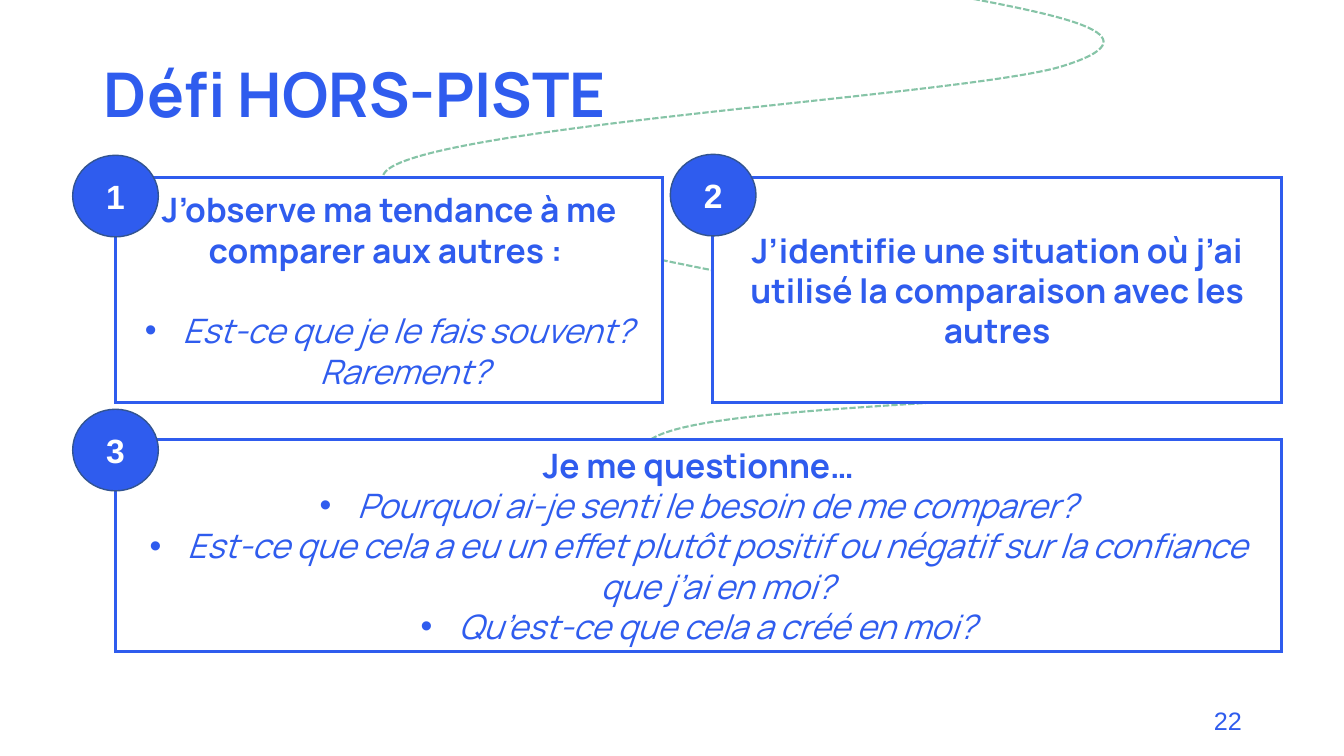
"""Build the "Défi HORS-PISTE" slide: three numbered challenge boxes over a dashed trail."""
from dataclasses import dataclass

import pptx
import pptx.dml.color
import pptx.enum.dml
import pptx.enum.shapes
import pptx.enum.text
import pptx.oxml.ns
import pptx.util
from lxml import etree

Pt = pptx.util.Pt
Align = pptx.enum.text.PP_ALIGN
qualified = pptx.oxml.ns.qn
Point = tuple[float, float]


@dataclass(frozen=True)
class Theme:
    blue: str = "2F5CEE"
    badge_edge: str = "325491"
    trail: str = "86C4A7"
    white: str = "FFFFFF"
    text_font: str = "Manrope"
    number_font: str = "Arial"
    title_size: float = 44
    text_size: float = 24
    page_size: float = 18
    bullet_indent: float = 27


@dataclass(frozen=True)
class Challenge:
    placeholder: int
    left: float
    top: float
    width: float
    height: float
    badge_top: float
    heading: str
    questions: tuple[str, ...] = ()
    question_gap: float = 0


THEME = Theme()
BADGE_WIDTH, BADGE_HEIGHT, BADGE_OVERHANG = 61.2, 58.3, 30.4

CHALLENGES = (
    Challenge(1, 82.3, 126.5, 391, 161.3, 110.9,
              "J’observe ma tendance à me comparer aux autres : ",
              ("Est-ce que je le fais souvent? Rarement? ",), 28.8),
    Challenge(2, 509.2, 126.5, 406, 161.3, 110.2,
              "J’identifie une situation où j’ai utilisé la comparaison avec les autres"),
    Challenge(3, 82.3, 313.7, 833, 151.9, 292.3,
              "Je me questionne…",
              ("Pourquoi ai-je senti le besoin de me comparer?",
               "Est-ce que cela a eu un effet plutôt positif ou négatif "
               "sur la confiance que j’ai en moi?",
               "Qu’est-ce que cela a créé en moi?")),
)

TRAIL_START: Point = (695.5, -0.7)
TRAIL_CURVES: tuple[tuple[Point, Point, Point], ...] = (
    ((761.8, 12.2), (828.7, 25.9), (758.2, 47.5)),
    ((687.6, 69.1), (267.1, 92.2), (273.6, 127.4)),
    ((279.4, 163.4), (763.2, 230.4), (795.6, 261.4)),
    ((828, 292.3), (519.8, 283.7), (467.3, 312.5)),
    ((414.7, 341.3), (447.8, 388.8), (480.2, 435.6)),
)


def rgb(value: str) -> pptx.dml.color.RGBColor:
    return pptx.dml.color.RGBColor.from_string(value)


def place(shape, left: float, top: float, width: float, height: float) -> None:
    shape.left, shape.top = Pt(left), Pt(top)
    shape.width, shape.height = Pt(width), Pt(height)


def paint(shape, fill: str, line: str, line_width: float) -> None:
    shape.fill.solid()
    shape.fill.fore_color.rgb = rgb(fill)
    shape.line.color.rgb = rgb(line)
    shape.line.width = Pt(line_width)
    outline = shape.element.spPr.find(qualified("a:ln"))
    etree.SubElement(outline, qualified("a:miter")).set("lim", "800000")


def prepare_frame(shape):
    frame = shape.text_frame
    frame.word_wrap = True
    frame.auto_size = pptx.enum.text.MSO_AUTO_SIZE.NONE
    frame.vertical_anchor = pptx.enum.text.MSO_ANCHOR.MIDDLE
    return frame


def add_text(paragraph, text: str, font: str, size: float, color: str,
             align: Align, bold: bool = False, italic: bool = False) -> None:
    paragraph.alignment = align
    run = paragraph.add_run()
    run.text = text
    run.font.name, run.font.size = font, Pt(size)
    run.font.bold, run.font.italic = bold, italic
    run.font.color.rgb = rgb(color)


def set_bullet(paragraph, bulleted: bool) -> None:
    properties = paragraph._p.get_or_add_pPr()
    indent = Pt(THEME.bullet_indent) if bulleted else 0
    properties.set("marL", str(indent))
    properties.set("indent", str(-indent))
    if bulleted:
        etree.SubElement(properties, qualified("a:buFont")).set("typeface", "Arial")
        etree.SubElement(properties, qualified("a:buChar")).set("char", "•")
    else:
        etree.SubElement(properties, qualified("a:buNone"))


def add_title(slide) -> None:
    title = slide.shapes.title
    place(title, 67, 17.3, 828, 104.4)
    paragraph = prepare_frame(title).paragraphs[0]
    paragraph.line_spacing = 0.9
    add_text(paragraph, "Défi HORS-PISTE", THEME.text_font, THEME.title_size,
             THEME.blue, Align.LEFT, bold=True)


def bend_segments(trail) -> None:
    segments = list(trail.element.iter(qualified("a:lnTo")))
    for segment, curve in zip(segments, TRAIL_CURVES):
        bend = etree.Element(qualified("a:cubicBezTo"))
        for x, y in curve:
            corner = etree.SubElement(bend, qualified("a:pt"))
            corner.set("x", str(Pt(x) - trail.left))
            corner.set("y", str(Pt(y) - trail.top))
        segment.getparent().replace(segment, bend)


def add_trail(slide) -> None:
    builder = slide.shapes.build_freeform(Pt(TRAIL_START[0]), Pt(TRAIL_START[1]))
    ends = [(Pt(x), Pt(y)) for _, _, (x, y) in TRAIL_CURVES]
    builder.add_line_segments(ends, close=False)
    trail = builder.convert_to_shape()
    bend_segments(trail)
    trail.shadow.inherit = False
    trail.fill.background()
    trail.line.color.rgb = rgb(THEME.trail)
    trail.line.width = Pt(1.5)
    trail.line.dash_style = pptx.enum.dml.MSO_LINE.SQUARE_DOT
    slide.shapes.title.element.addprevious(trail.element)


def add_challenge(slide, challenge: Challenge) -> None:
    box = slide.placeholders[challenge.placeholder]
    place(box, challenge.left, challenge.top, challenge.width, challenge.height)
    paint(box, THEME.white, THEME.blue, 2.25)
    frame = prepare_frame(box)
    for index, text in enumerate((challenge.heading, *challenge.questions)):
        is_question = index > 0
        paragraph = frame.add_paragraph() if is_question else frame.paragraphs[0]
        paragraph.space_before = Pt(challenge.question_gap if index == 1 else 0)
        set_bullet(paragraph, is_question)
        add_text(paragraph, text, THEME.text_font, THEME.text_size, THEME.blue,
                 Align.CENTER, bold=not is_question, italic=is_question)


def add_badge(slide, number: int, challenge: Challenge) -> None:
    badge = slide.shapes.add_shape(
        pptx.enum.shapes.MSO_SHAPE.OVAL, Pt(challenge.left - BADGE_OVERHANG),
        Pt(challenge.badge_top), Pt(BADGE_WIDTH), Pt(BADGE_HEIGHT))
    badge.shadow.inherit = False
    paint(badge, THEME.blue, THEME.badge_edge, 1)
    add_text(prepare_frame(badge).paragraphs[0], str(number), THEME.number_font,
             THEME.text_size, THEME.white, Align.CENTER, bold=True)


def add_page_number(slide) -> None:
    box = slide.shapes.add_textbox(Pt(678.2), Pt(500.4), Pt(216), Pt(28.8))
    add_text(prepare_frame(box).paragraphs[0], "22", THEME.number_font,
             THEME.page_size, THEME.blue, Align.RIGHT)


def main() -> None:
    presentation = pptx.Presentation()
    presentation.slide_width, presentation.slide_height = Pt(960), Pt(540)
    slide = presentation.slides.add_slide(presentation.slide_layouts.get_by_name("Comparison"))
    add_title(slide)
    add_trail(slide)
    for number, challenge in enumerate(CHALLENGES, start=1):
        add_challenge(slide, challenge)
        add_badge(slide, number, challenge)
    add_page_number(slide)
    unused = slide.placeholders[4].element
    unused.getparent().remove(unused)
    presentation.save("out.pptx")


if __name__ == "__main__":
    main()
